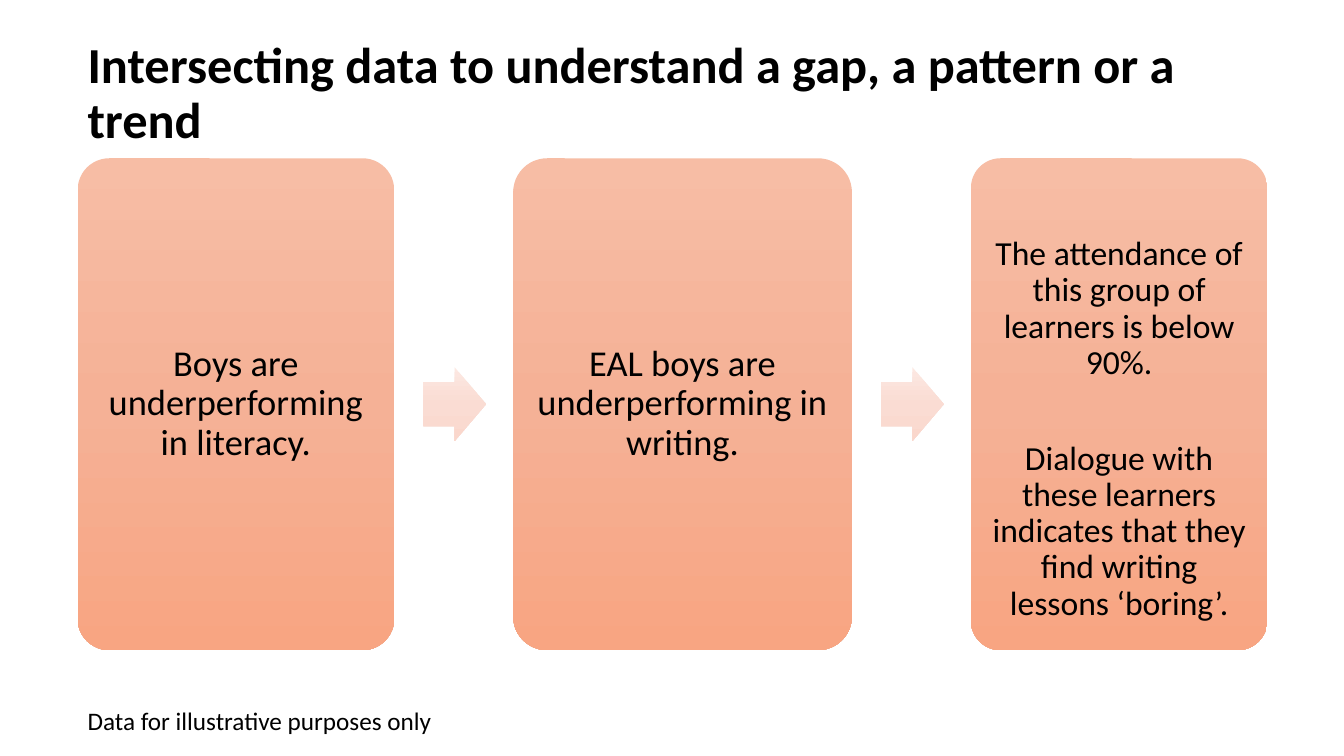
from dataclasses import dataclass

from lxml.etree import SubElement
from pptx import Presentation
from pptx.dml.color import RGBColor
from pptx.enum.shapes import MSO_SHAPE
from pptx.enum.text import MSO_ANCHOR, PP_ALIGN
from pptx.oxml.ns import qn
from pptx.util import Inches, Pt


@dataclass(frozen=True)
class Theme:
    font: str = "Calibri"
    ink: str = "000000"
    card: tuple = ("F7BDA5", "F5B196", "F8A582")
    arrow: tuple = ("FCE8E2", "FADCD3", "FAD7CC")
    title: int = 36
    finding: int = 26
    detail: int = 24
    note: int = 18


THEME = Theme()
LEFT = 0.77
CARD_TOP, CARD_HEIGHT = 1.57, 4.88
ARROW_WIDTH, ARROW_HEIGHT = 0.62, 0.73
GAP_BEFORE_ARROW, GAP_AFTER_ARROW = 0.29, 0.27

FINDINGS = [
    (3.14, THEME.finding, ["Boys are underperforming in literacy."], 0.11, 0.11),
    (3.36, THEME.finding, ["EAL boys are underperforming in writing."], 0.11, 0.11),
    (2.94, THEME.detail, [
        "The attendance of this group of learners is below 90%.",
        "Dialogue with these learners indicates that they find writing lessons ‘boring’.",
    ], 0.1, 0.6),
]


def apply_format(target, values):
    for name, value in values.items():
        setattr(target, name, value)


def write_text(frame, texts, size, bold=False, para_format=None):
    for index, text in enumerate(texts):
        para = frame.paragraphs[0] if index == 0 else frame.add_paragraph()
        apply_format(para, para_format or {})
        span = para.add_run()
        span.text = text
        apply_format(span.font, {"name": THEME.font, "size": Pt(size), "bold": bold})
        span.font.color.rgb = RGBColor.from_string(THEME.ink)


def fill_downward(shape, colors):
    shape.fill.gradient()
    gradient = shape.element.spPr.find(qn("a:gradFill"))
    stops = gradient.find(qn("a:gsLst"))
    for stop in list(stops):
        stops.remove(stop)
    for index, color in enumerate(colors):
        position = index * 100000 // (len(colors) - 1)
        stop = SubElement(stops, qn("a:gs"), pos=str(position))
        SubElement(stop, qn("a:srgbClr"), val=color)
    gradient.find(qn("a:lin")).set("ang", "5400000")


def add_block(page, kind, left, top, width, height, adjustments, colors):
    block = page.shapes.add_shape(
        kind, Inches(left), Inches(top), Inches(width), Inches(height))
    for index, value in enumerate(adjustments):
        block.adjustments[index] = value
    fill_downward(block, colors)
    block.line.fill.background()
    block.shadow.inherit = False
    return block


def add_card(page, left, width, size, texts, inset, top_inset):
    card = add_block(page, MSO_SHAPE.ROUNDED_RECTANGLE, left, CARD_TOP,
                     width, CARD_HEIGHT, [0.1], THEME.card)
    apply_format(card.text_frame, {
        "word_wrap": True,
        "vertical_anchor": MSO_ANCHOR.MIDDLE,
        "margin_left": Inches(inset),
        "margin_right": Inches(inset),
        "margin_top": Inches(top_inset),
        "margin_bottom": Inches(inset),
    })
    write_text(card.text_frame, texts, size, para_format={
        "alignment": PP_ALIGN.CENTER, "line_spacing": 0.9})
    for para in card.text_frame.paragraphs[:-1]:
        para.space_after = Pt(42.5)


def add_arrow(page, left):
    top = CARD_TOP + (CARD_HEIGHT - ARROW_HEIGHT) / 2
    add_block(page, MSO_SHAPE.RIGHT_ARROW, left, top,
              ARROW_WIDTH, ARROW_HEIGHT, [0.6, 0.5], THEME.arrow)


def add_label(page, top, width, height, text, size, bold=False, line_spacing=1.0):
    box = page.shapes.add_textbox(
        Inches(LEFT), Inches(top), Inches(width), Inches(height))
    apply_format(box.text_frame, {
        "word_wrap": True, "vertical_anchor": MSO_ANCHOR.TOP})
    write_text(box.text_frame, [text], size, bold, {"line_spacing": line_spacing})


def main():
    deck = Presentation()
    apply_format(deck, {"slide_width": Inches(13.33), "slide_height": Inches(7.5)})
    page = deck.slides.add_slide(deck.slide_layouts[6])

    add_label(page, 0.35, 11.5, 0.69,
              "Intersecting data to understand a gap, a pattern or a trend",
              THEME.title, bold=True, line_spacing=0.9)
    left = LEFT
    for index, (width, size, texts, inset, top_inset) in enumerate(FINDINGS):
        if index:
            add_arrow(page, left + GAP_BEFORE_ARROW)
            left += GAP_BEFORE_ARROW + ARROW_WIDTH + GAP_AFTER_ARROW
        add_card(page, left, width, size, texts, inset, top_inset)
        left += width
    add_label(page, 6.95, 3.71, 0.4, "Data for illustrative purposes only", THEME.note)

    deck.save("out.pptx")


if __name__ == "__main__":
    main()
